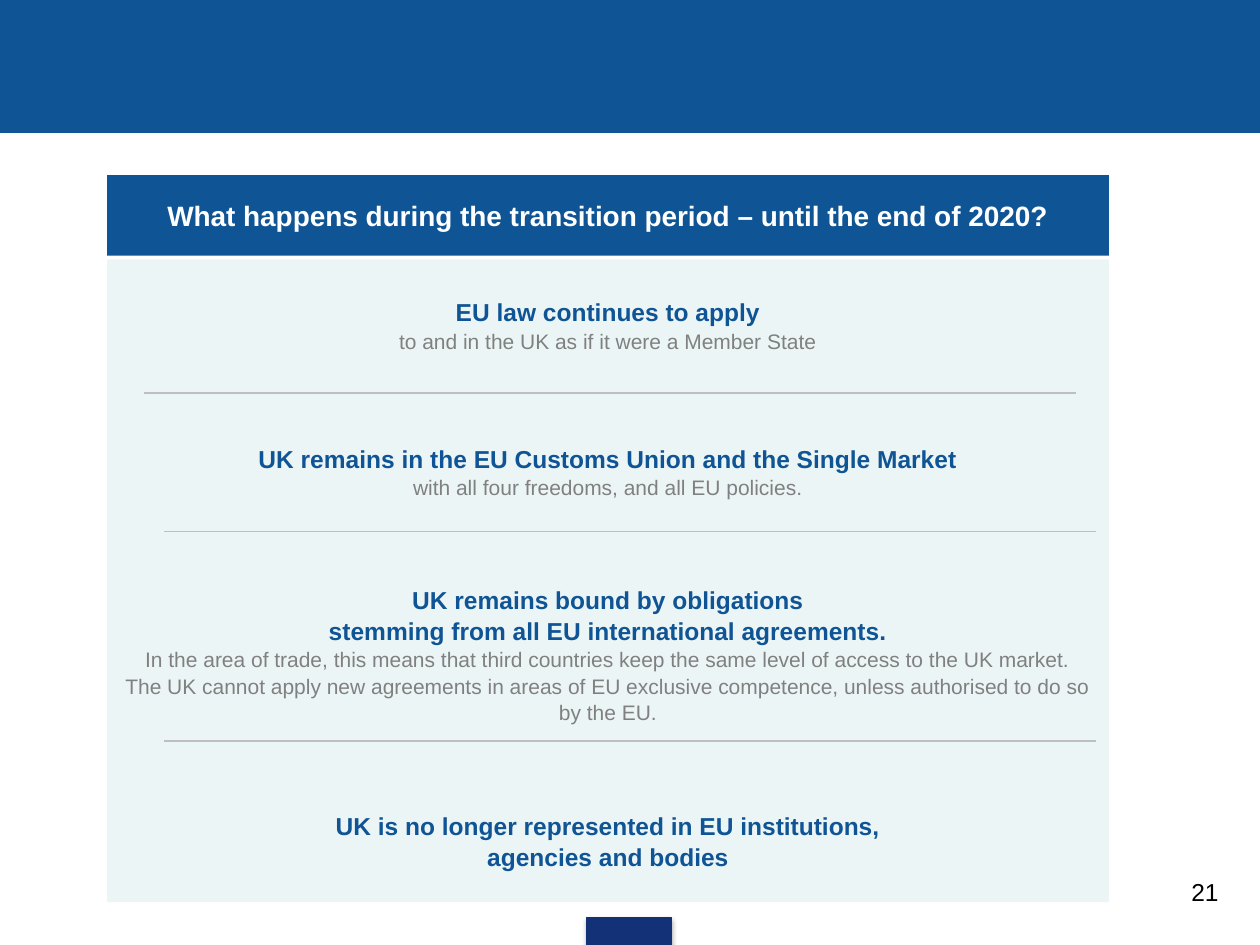
from lxml.etree import SubElement
from pptx import Presentation
from pptx.dml.color import RGBColor
from pptx.enum.shapes import MSO_CONNECTOR, MSO_SHAPE
from pptx.enum.text import MSO_ANCHOR, PP_ALIGN
from pptx.oxml.ns import qn
from pptx.util import Inches, Pt

BLUE = RGBColor(0x0F, 0x54, 0x94)
NAVY = RGBColor(0x13, 0x31, 0x76)
PALE = RGBColor(0xDA, 0xED, 0xEF)
GREY = RGBColor(0x80, 0x80, 0x80)
RULE = RGBColor(0xBF, 0xBF, 0xBF)
WHITE = RGBColor(0xFF, 0xFF, 0xFF)
BLACK = RGBColor(0, 0, 0)
FONT = "Arial"

# Each topic: space before in points, heading lines, detail lines
TOPICS = [
    (0, ["EU law continues to apply"],
     ["to and in the UK as if it were a Member State"]),
    (50.7, ["UK remains in the EU Customs Union and the Single Market"],
     ["with all four freedoms, and all EU policies."]),
    (48.3, ["UK remains bound by obligations",
            "stemming from all EU international agreements."],
     ["In the area of trade, this means that third countries keep the same "
      "level of access to the UK market.",
      "The UK cannot apply new agreements in areas of EU exclusive competence, "
      "unless authorised to do so by the EU."]),
    (48.3, ["UK is no longer represented in EU institutions,",
            "agencies and bodies"], []),
]
DIVIDERS = [(1.14, 3.12), (1.3, 4.22), (1.3, 5.88)]
DIVIDER_WIDTH = 7.4


def add_rectangle(page, left, top, width, height, fill, outlined=False):
    box = page.shapes.add_shape(MSO_SHAPE.RECTANGLE, Inches(left), Inches(top),
                                Inches(width), Inches(height))
    box.shadow.inherit = False
    box.fill.solid()
    box.fill.fore_color.rgb = fill
    if outlined:
        box.line.color.rgb = fill
        box.line.width = Pt(0.75)
    else:
        box.line.fill.background()
    return box


def write_line(para, text, size, color, bold=False, align=PP_ALIGN.CENTER):
    para.text = text
    para.alignment = align
    font = para.runs[0].font
    font.name, font.size, font.bold = FONT, Pt(size), bold
    font.color.rgb = color


def add_soft_shadow(box):
    effects = box._element.spPr.find(qn("a:effectLst"))
    shadow = SubElement(effects, qn("a:outerShdw"), blurRad=str(Pt(3.1)),
                        dist=str(Pt(1.8)), dir="5400000", rotWithShape="0")
    color = SubElement(shadow, qn("a:srgbClr"), val="000000")
    SubElement(color, qn("a:alpha"), val="35000")


def add_page_frame(page):
    add_rectangle(page, 0, 0, 10, 1.05, BLUE, outlined=True)
    tab = add_rectangle(page, 4.66, 7.28, 0.67, 0.22, NAVY, outlined=True)
    add_soft_shadow(tab)


def add_title(page, left, top, width, height):
    box = add_rectangle(page, left, top, width, height, BLUE)
    frame = box.text_frame
    frame.word_wrap = True
    frame.vertical_anchor = MSO_ANCHOR.MIDDLE
    write_line(frame.paragraphs[0],
               "What happens during the transition period – until the end of 2020?",
               16, WHITE, bold=True)


def add_topics(page, left, top, width, height):
    panel = add_rectangle(page, left, top, width, height, PALE)
    color = panel._element.spPr.find(qn("a:solidFill")).find(qn("a:srgbClr"))
    SubElement(color, qn("a:alpha"), val="50000")
    frame = panel.text_frame
    frame.word_wrap = True
    frame.vertical_anchor = MSO_ANCHOR.TOP
    frame.margin_left = frame.margin_right = Inches(0.12)
    frame.margin_top = Inches(0.29)
    para = frame.paragraphs[0]
    for gap, headings, details in TOPICS:
        lines = [(text, 14, BLUE, True) for text in headings]
        lines += [(text, 12, GREY, False) for text in details]
        for index, line in enumerate(lines):
            if para is None:
                para = frame.add_paragraph()
            write_line(para, *line)
            para.line_spacing = 1.05
            if index == 0 and gap:
                para.space_before = Pt(gap)
            para = None


def add_divider(page, left, top, width):
    line = page.shapes.add_connector(MSO_CONNECTOR.STRAIGHT, Inches(left), Inches(top),
                                     Inches(left + width), Inches(top))
    line.line.color.rgb = RULE
    line.line.width = Pt(0.75)
    SubElement(line._element.spPr, qn("a:effectLst"))


def add_page_number(page, left, top, width, height):
    box = page.shapes.add_textbox(Inches(left), Inches(top), Inches(width), Inches(height))
    box.text_frame.word_wrap = True
    write_line(box.text_frame.paragraphs[0], "21", 14, BLACK, align=PP_ALIGN.RIGHT)


def main():
    deck = Presentation()
    deck.slide_width, deck.slide_height = Inches(10), Inches(7.5)
    page = deck.slides.add_slide(deck.slide_layouts[6])
    add_page_frame(page)
    add_topics(page, 0.85, 2.06, 7.95, 5.1)
    add_title(page, 0.85, 1.39, 7.95, 0.64)
    for left, top in DIVIDERS:
        add_divider(page, left, top, DIVIDER_WIDTH)
    add_page_number(page, 7.44, 6.91, 2.33, 0.52)
    deck.save("out.pptx")


if __name__ == "__main__":
    main()
